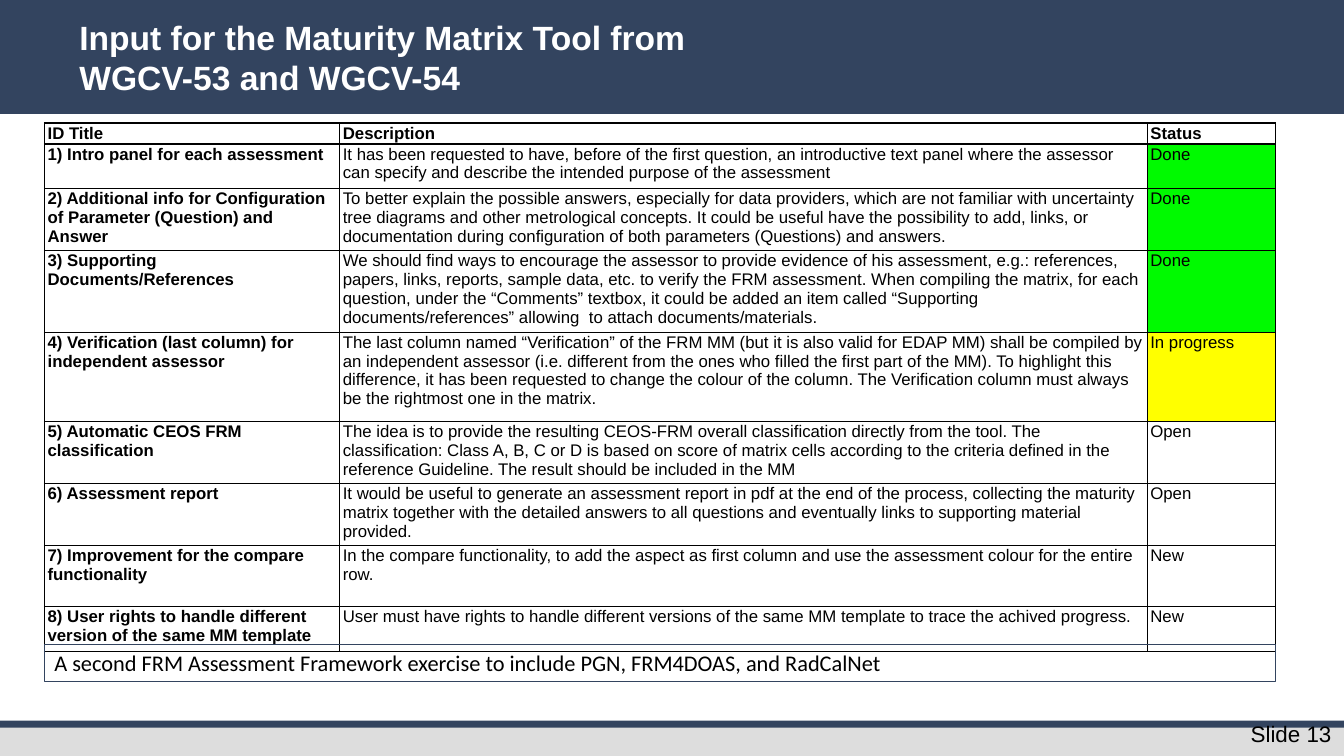
from dataclasses import dataclass

from lxml.etree import SubElement
from pptx import Presentation
from pptx.dml.color import RGBColor as RGB
from pptx.enum.shapes import MSO_SHAPE as Shape
from pptx.enum.text import MSO_ANCHOR as Anchor, PP_ALIGN as Align
from pptx.oxml.ns import qn
from pptx.util import Cm, Pt


@dataclass(frozen=True)
class Theme:
    navy: str = "33445F"
    grey: str = "DDDDDD"
    black: str = "000000"
    white: str = "FFFFFF"
    done: str = "00FA00"
    in_progress: str = "FFFF00"
    font: str = "Arial"
    note_font: str = "Calibri"
    title_size: int = 24
    note_size: int = 16
    table_size: int = 12


THEME = Theme()
STATUS_FILL = {"Done": THEME.done, "In progress": THEME.in_progress}
SLIDE_W, SLIDE_H = 33.87, 19.05

HEADER = ("ID Title", "Description", "Status")
COLUMN_WIDTHS = (7.44, 20.35, 3.23)
HEADER_HEIGHT = 0.51

# Row height in cm, title, description, status
REQUESTS = [
    (1.13, "1) Intro panel for each assessment",
     "It has been requested to have, before of the first question, an introductive text panel "
     "where the assessor can specify and describe the intended purpose of the assessment",
     "Done"),
    (1.56, "2) Additional info for Configuration of Parameter (Question) and Answer",
     "To better explain the possible answers, especially for data providers, which are not "
     "familiar with uncertainty tree diagrams and other metrological concepts. It could be "
     "useful have the possibility to add, links, or documentation during configuration of both "
     "parameters (Questions) and answers.",
     "Done"),
    (2.05, "3) Supporting Documents/References",
     "We should find ways to encourage the assessor to provide evidence of his assessment, "
     "e.g.: references, papers, links, reports, sample data, etc. to verify the FRM assessment. "
     "When compiling the matrix, for each question, under the “Comments” textbox, it could be "
     "added an item called “Supporting documents/references” allowing  to attach "
     "documents/materials.",
     "Done"),
    (2.25, "4) Verification (last column) for independent assessor",
     "The last column named “Verification” of the FRM MM (but it is also valid for EDAP MM) "
     "shall be compiled by an independent assessor (i.e. different from the ones who filled the "
     "first part of the MM). To highlight this difference, it has been requested to change the "
     "colour of the column. The Verification column must always be the rightmost one in the "
     "matrix.",
     "In progress"),
    (1.56, "5) Automatic CEOS FRM classification",
     "The idea is to provide the resulting CEOS-FRM overall classification directly from the "
     "tool. The classification: Class A, B, C or D is based on score of matrix cells according "
     "to the criteria defined in the reference Guideline. The result should be included in the MM",
     "Open"),
    (1.56, "6) Assessment report",
     "It would be useful to generate an assessment report in pdf at the end of the process, "
     "collecting the maturity matrix together with the detailed answers to all questions and "
     "eventually links to supporting material provided.",
     "Open"),
    (1.54, "7) Improvement for the compare functionality",
     "In the compare functionality, to add the aspect as first column and use the assessment "
     "colour for the entire row.",
     "New"),
    (1.14, "8) User rights to handle different version of the same MM template",
     "User must have rights to handle different versions of the same MM template to trace the "
     "achived progress.",
     "New"),
]


def write(tf, text, size, color=THEME.black, font=THEME.font, bold=False):
    tf.text = text
    p = tf.paragraphs[0]
    p.alignment = Align.LEFT
    r = p.runs[0]
    r.font.name, r.font.size, r.font.bold = font, Pt(size), bold
    r.font.color.rgb = RGB.from_string(color)


def add_bar(slide, left, top, width, height, color):
    sp = slide.shapes.add_shape(Shape.RECTANGLE, Cm(left), Cm(top), Cm(width), Cm(height))
    sp.shadow.inherit = False
    sp.fill.solid()
    sp.fill.fore_color.rgb = RGB.from_string(color)
    sp.line.fill.background()


def add_header(slide, left, top, width, height):
    add_bar(slide, left, top, width, height, THEME.navy)
    sp = slide.shapes.add_textbox(Cm(left + 1.75), Cm(top + 0.3), Cm(16.94), Cm(2.31))
    sp.text_frame.word_wrap = True
    write(sp.text_frame, "Input for the Maturity Matrix Tool from WGCV-53 and WGCV-54",
          THEME.title_size, THEME.white, bold=True)


def add_footer(slide, left, top, width, height):
    stripe = 0.18
    add_bar(slide, left, top + 0.1, width, height - 0.1, THEME.grey)
    add_bar(slide, left, top, width, stripe, THEME.navy)
    sp = slide.shapes.add_textbox(Cm(left + width - 2.6), Cm(top - 0.13), Cm(2.6), Cm(0.94))
    write(sp.text_frame, "Slide 13", THEME.note_size)


def border_cell(cell):
    tc_pr = cell._tc.get_or_add_tcPr()
    for i, side in enumerate(("lnL", "lnR", "lnT", "lnB")):
        ln = SubElement(tc_pr, qn(f"a:{side}"), w=str(Pt(1)))
        fill = SubElement(ln, qn("a:solidFill"))
        SubElement(fill, qn("a:srgbClr"), val=THEME.black)
        tc_pr.insert(i, ln)


def fill_cell(cell, text, bold):
    cell.margin_left = cell.margin_right = Cm(0.08)
    cell.margin_top, cell.margin_bottom = Cm(0.02), Cm(0)
    cell.vertical_anchor = Anchor.TOP
    write(cell.text_frame, text, THEME.table_size, bold=bold)
    if text in STATUS_FILL:
        cell.fill.solid()
        cell.fill.fore_color.rgb = RGB.from_string(STATUS_FILL[text])
    else:
        cell.fill.background()
    border_cell(cell)


def add_requests(slide, left, top):
    rows = [(HEADER_HEIGHT, *HEADER), *REQUESTS]
    height = sum(row[0] for row in rows)
    table = slide.shapes.add_table(len(rows), len(HEADER), Cm(left), Cm(top),
                                   Cm(sum(COLUMN_WIDTHS)), Cm(height)).table
    table.horz_banding = table.first_row = False
    for column, width in zip(table.columns, COLUMN_WIDTHS):
        column.width = Cm(width)
    for i, (row_height, *texts) in enumerate(rows):
        table.rows[i].height = Cm(row_height)
        for j, text in enumerate(texts):
            fill_cell(table.cell(i, j), text, bold=i == 0 or j == 0)


def add_note(slide, left, top, width, height):
    sp = slide.shapes.add_shape(Shape.RECTANGLE, Cm(left), Cm(top), Cm(width), Cm(height))
    sp.shadow.inherit = False
    sp.fill.background()
    sp.line.color.rgb = RGB.from_string(THEME.navy)
    sp.line.width = Pt(0.75)
    sp.text_frame.vertical_anchor = Anchor.TOP
    sp.text_frame.word_wrap = True
    write(sp.text_frame,
          "A second FRM Assessment Framework exercise to include PGN, FRM4DOAS, and RadCalNet",
          THEME.note_size, font=THEME.note_font)


def main():
    prs = Presentation()
    prs.slide_width, prs.slide_height = Cm(SLIDE_W), Cm(SLIDE_H)
    slide = prs.slides.add_slide(prs.slide_layouts[6])
    margin = 1.12
    add_header(slide, 0, 0, SLIDE_W, 2.87)
    add_footer(slide, 0, 18.16, SLIDE_W, SLIDE_H - 18.16)
    add_requests(slide, margin, 3.1)
    add_note(slide, margin, 16.24, sum(COLUMN_WIDTHS), 0.94)
    prs.save("out.pptx")


if __name__ == "__main__":
    main()
